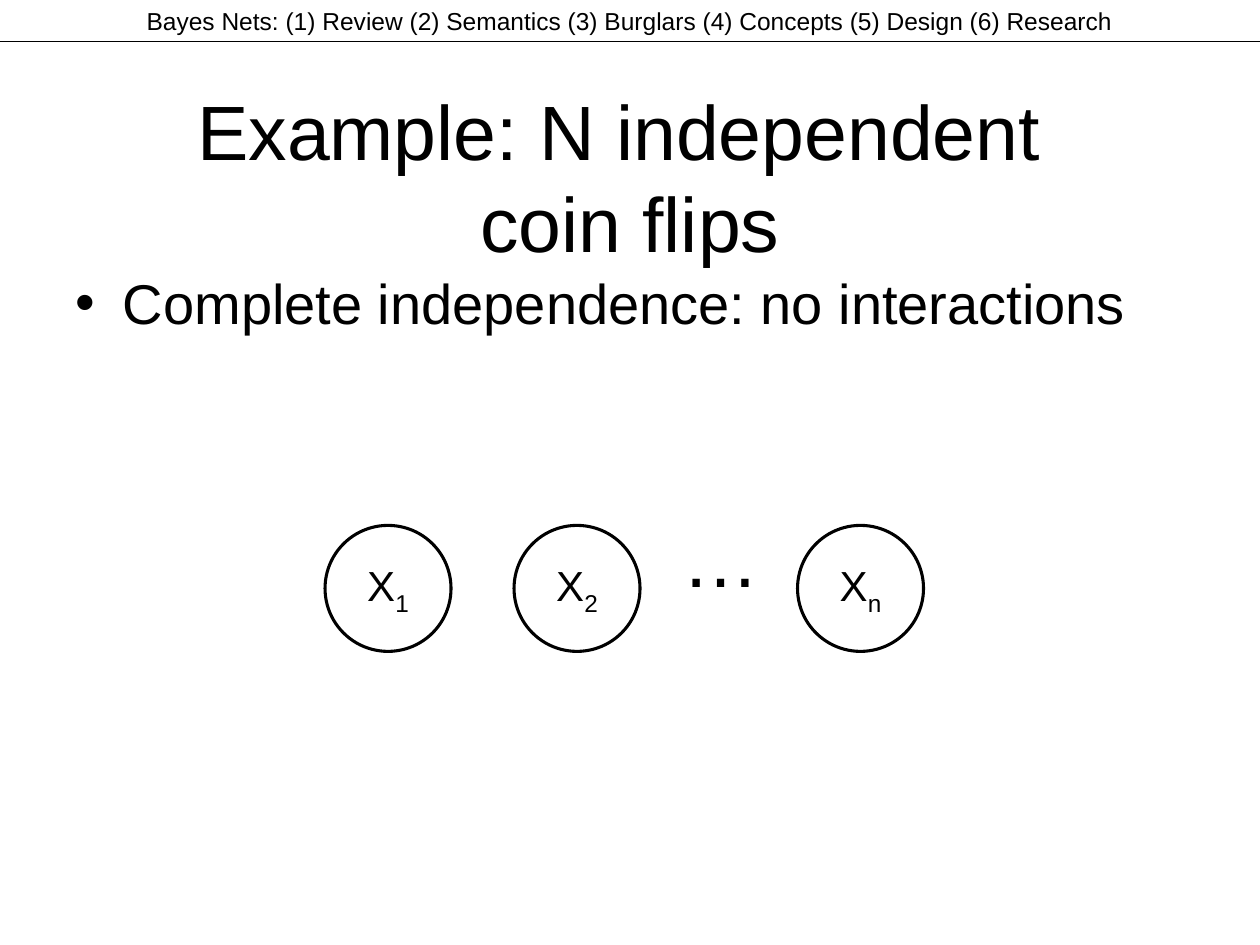
from pptx import Presentation
from pptx.dml.color import RGBColor
from pptx.enum import shapes, text
from pptx.oxml.ns import qn
from pptx.util import Inches, Pt
from lxml import etree

BLACK = "000000"


def color(hex_code):
    return RGBColor.from_string(hex_code)


def add_run(paragraph, words, size):
    run = paragraph.add_run()
    run.text = words
    run.font.name = "Arial"
    run.font.size = Pt(size)
    run.font.color.rgb = color(BLACK)
    return run


prs = Presentation()
prs.slide_width, prs.slide_height = Inches(10), Inches(7.5)
slide = prs.slides.add_slide(prs.slide_layouts[1])
slide.background.fill.solid()
slide.background.fill.fore_color.rgb = color("FFFFFF")

outline = slide.shapes.add_textbox(Inches(0.5), Inches(0), Inches(9), Inches(0.42))
outline.text_frame.word_wrap = True
topics = outline.text_frame.paragraphs[0]
topics.alignment = text.PP_ALIGN.CENTER
add_run(topics, "Bayes Nets: (1) Review (2) Semantics (3) Burglars (4) Concepts (5) Design (6) Research", 14)

header_rule = slide.shapes.add_connector(
    shapes.MSO_CONNECTOR.STRAIGHT, Inches(0), Inches(0.33), Inches(10), Inches(0.33))
header_rule.line.color.rgb = color(BLACK)
header_rule.line.width = Pt(0.75)
etree.SubElement(header_rule._element.spPr, qn("a:effectLst"))

title = slide.shapes.title
title.left, title.top, title.width, title.height = Inches(0.5), Inches(0.77), Inches(9), Inches(1.25)
title.text_frame.vertical_anchor = text.MSO_ANCHOR.MIDDLE
heading = title.text_frame.paragraphs[0]
heading.alignment = text.PP_ALIGN.CENTER
add_run(heading, "Example: N independent ", 44)
heading.add_line_break()
add_run(heading, "coin flips", 44)

body = slide.placeholders[1]
body.left, body.top, body.width, body.height = Inches(0.5), Inches(2.08), Inches(9), Inches(4.62)
add_run(body.text_frame.paragraphs[0], "Complete independence: no interactions", 32)

for subscript, left in [("1", 2.58), ("2", 4.08), ("n", 6.33)]:
    node = slide.shapes.add_shape(
        shapes.MSO_SHAPE.OVAL, Inches(left), Inches(4.17), Inches(1), Inches(1))
    node.shadow.inherit = False
    node.fill.background()
    node.line.color.rgb = color(BLACK)
    node.line.width = Pt(1.75)
    node.text_frame.vertical_anchor = text.MSO_ANCHOR.MIDDLE
    node.text_frame.word_wrap = False
    variable = node.text_frame.paragraphs[0]
    variable.alignment = text.PP_ALIGN.CENTER
    add_run(variable, "X", 24)
    index = add_run(variable, subscript, 24)
    index.font._element.set("baseline", "-25000")

ellipsis = slide.shapes.add_textbox(Inches(5.32), Inches(4), Inches(1.4), Inches(0.84))
ellipsis.text_frame.word_wrap = True
ellipsis.text_frame.auto_size = text.MSO_AUTO_SIZE.SHAPE_TO_FIT_TEXT
add_run(ellipsis.text_frame.paragraphs[0], "…", 44)

prs.save("out.pptx")
